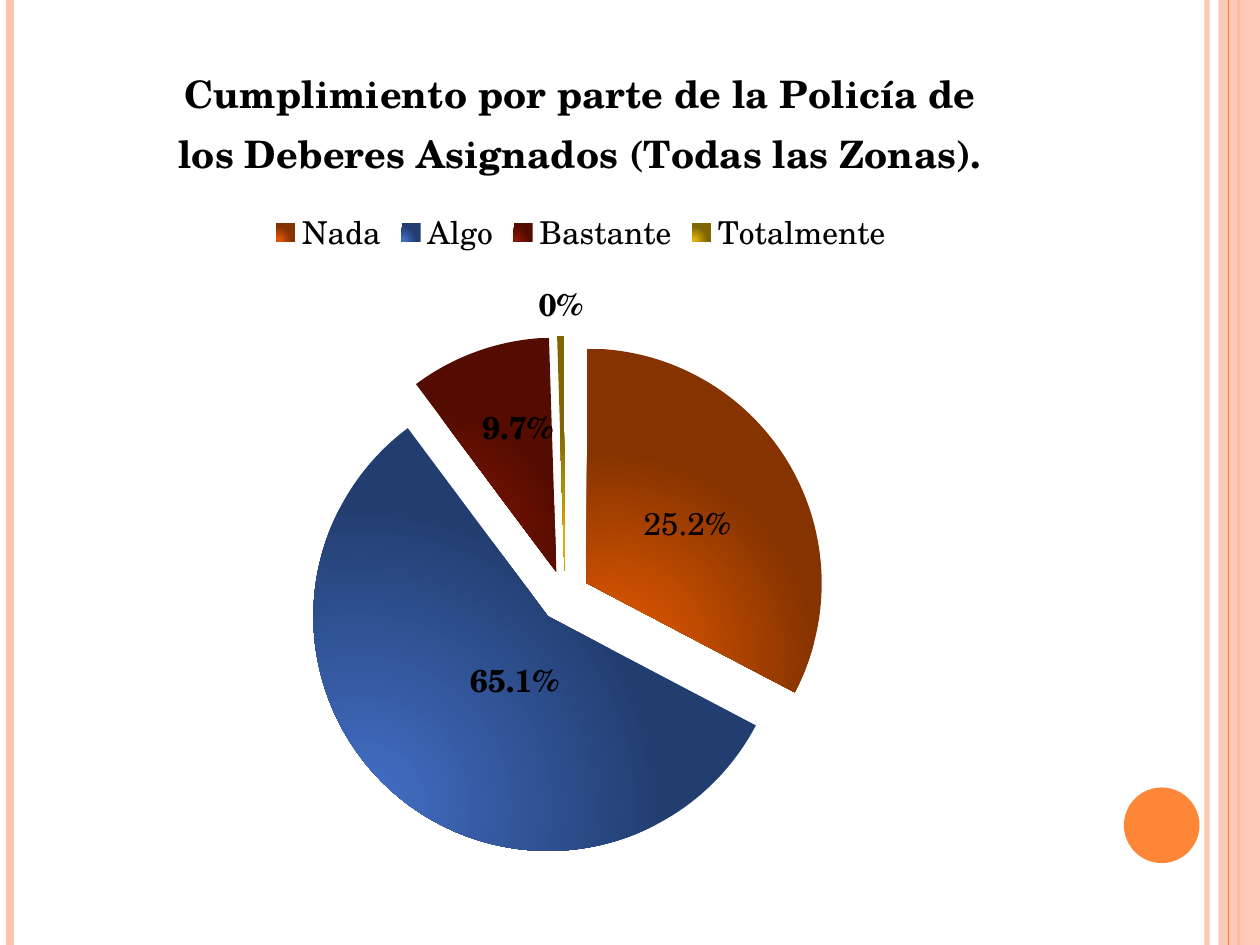
import dataclasses
from typing import Optional

import lxml.etree
import pptx
import pptx.chart.data
import pptx.dml.color
import pptx.enum.chart
import pptx.enum.shapes
import pptx.oxml
import pptx.oxml.ns
import pptx.util

Inches, Pt = pptx.util.Inches, pptx.util.Pt
RGBColor = pptx.dml.color.RGBColor
qn = pptx.oxml.ns.qn
LabelPos = pptx.enum.chart.XL_LABEL_POSITION

FONT = "TeX Gyre Schola"
BLACK = RGBColor(0x00, 0x00, 0x00)
PEACH = RGBColor(0xFE, 0xC3, 0xAE)
ORANGE = RGBColor(0xFE, 0x86, 0x37)


@dataclasses.dataclass
class Stripe:
    x: float
    width: float
    color: RGBColor
    alpha: Optional[int] = None


@dataclasses.dataclass
class Slice:
    name: str
    value: float
    label: str
    bright: RGBColor
    dark: RGBColor
    bold: bool = True
    pos: LabelPos = LabelPos.CENTER
    shift: tuple = (0, 0)


STRIPES = [
    Stripe(9.58, 3, PEACH, 93),
    Stripe(0.08, 4.5, PEACH),
    Stripe(9.83, 1.5, ORANGE),
]
THIN_STRIPE = Stripe(9.75, 0.75, ORANGE)

SLICES = [
    Slice("Nada", 32.7, "25.2%", RGBColor(0xEA, 0x5C, 0x00), RGBColor(0x85, 0x33, 0x00), bold=False),
    Slice("Algo", 57.1, "65.1%", RGBColor(0x44, 0x70, 0xC8), RGBColor(0x22, 0x3E, 0x70),
          shift=(0.04, -0.03)),
    Slice("Bastante", 9.7, "9.7%", RGBColor(0x90, 0x18, 0x00), RGBColor(0x55, 0x0C, 0x00),
          shift=(0, -0.04)),
    Slice("Totalmente", 0.5, "0%", RGBColor(0xE6, 0xBA, 0x0A), RGBColor(0x80, 0x66, 0x00),
          pos=LabelPos.OUTSIDE_END),
]


def set_alpha(sp, percent: int) -> None:
    color = sp._element.spPr.find(".//" + qn("a:srgbClr"))
    lxml.etree.SubElement(color, qn("a:alpha"), val=str(percent * 1000))


def add_stripe(s, stripe: Stripe) -> None:
    x = Inches(stripe.x)
    line = s.shapes.add_connector(pptx.enum.shapes.MSO_CONNECTOR.STRAIGHT, x, 0, x, Inches(7.5))
    line.line.color.rgb = stripe.color
    line.line.width = Pt(stripe.width)
    lxml.etree.SubElement(line._element.spPr, qn("a:effectLst"))
    if stripe.alpha:
        set_alpha(line, stripe.alpha)


def add_block(s, kind, left: float, top: float, width: float, height: float, color: RGBColor):
    sp = s.shapes.add_shape(kind, Inches(left), Inches(top), Inches(width), Inches(height))
    sp.shadow.inherit = False
    sp.fill.solid()
    sp.fill.fore_color.rgb = color
    sp.line.fill.background()
    return sp


def chart_layout(x: float, y: float, size: Optional[tuple] = None):
    """Manual layout: an offset, or a fixed inner plot box when size is given."""
    parts = [("x", x), ("y", y)]
    if size:
        parts = [("layoutTarget", "inner"), ("xMode", "edge"), ("yMode", "edge"),
                 *parts, ("w", size[0]), ("h", size[1])]
    layout = pptx.oxml.parse_xml(f"<c:layout {pptx.oxml.ns.nsdecls('c')}/>")
    manual = lxml.etree.SubElement(layout, qn("c:manualLayout"))
    for tag, val in parts:
        lxml.etree.SubElement(manual, qn("c:" + tag), val=str(val))
    return layout


def radial_fill(bright: RGBColor, dark: RGBColor):
    """Circular gradient that glows from near the bottom left corner."""
    return pptx.oxml.parse_xml(
        f'<a:gradFill {pptx.oxml.ns.nsdecls("a")} rotWithShape="1"><a:gsLst>'
        f'<a:gs pos="0"><a:srgbClr val="{bright}"/></a:gs>'
        f'<a:gs pos="100000"><a:srgbClr val="{dark}"/></a:gs></a:gsLst>'
        '<a:path path="circle"><a:fillToRect l="10000" t="90000" r="90000" b="10000"/>'
        '</a:path></a:gradFill>')


def set_font(font, size: float, bold: bool) -> None:
    font.name = FONT
    font.size = Pt(size)
    font.bold = bold
    font.color.rgb = BLACK


def style_slice(ser, idx: int, item: Slice) -> None:
    point = ser.points[idx]
    point.format.line.fill.background()
    point.format.fill.solid()
    solid = ser._element.xpath(f"c:dPt[c:idx/@val='{idx}']/c:spPr/a:solidFill")[0]
    solid.getparent().replace(solid, radial_fill(item.bright, item.dark))
    label = point.data_label
    r = label.text_frame.paragraphs[0].add_run()
    r.text = item.label
    set_font(r.font, 18, item.bold)
    label.position = item.pos
    if any(item.shift):
        node = ser._element.xpath(f"c:dLbls/c:dLbl[c:idx/@val='{idx}']")[0]
        for old in node.findall(qn("c:layout")):
            node.remove(old)
        node.insert(1, chart_layout(*item.shift))


def add_pie(s) -> None:
    data = pptx.chart.data.CategoryChartData()
    data.categories = [item.name for item in SLICES]
    data.add_series("Series 1", [item.value for item in SLICES])
    chart = s.shapes.add_chart(pptx.enum.chart.XL_CHART_TYPE.PIE, Inches(0.39), Inches(0.23),
                               Inches(8.44), Inches(6.88), data).chart
    set_font(chart.font, 18, False)

    # Title and legend
    chart.has_title = True
    r = chart.chart_title.text_frame.paragraphs[0].add_run()
    r.text = "Cumplimiento por parte de la Policía de los Deberes Asignados (Todas las Zonas)."
    set_font(r.font, 21.6, True)
    chart.has_legend = True
    chart.legend.position = pptx.enum.chart.XL_LEGEND_POSITION.TOP
    chart.legend.include_in_layout = False
    set_font(chart.legend.font, 18, False)

    # Slices and their labels
    plot = chart.plots[0]
    plot.vary_by_categories = True
    ser = plot.series[0]
    labels = ser.data_labels
    labels.show_percentage = True
    labels.show_value = False
    labels.number_format = "0.0%"
    labels.number_format_is_linked = False
    set_font(labels.font, 18, True)
    for idx, item in enumerate(SLICES):
        style_slice(ser, idx, item)
    explosion = pptx.oxml.parse_xml(f'<c:explosion {pptx.oxml.ns.nsdecls("c")} val="11"/>')
    ser._element.find(qn("c:dPt")).addprevious(explosion)

    # Plot box
    area = chart._chartSpace.find(".//" + qn("c:plotArea"))
    for old in area.findall(qn("c:layout")):
        area.remove(old)
    area.insert(0, chart_layout(0.24, 0.35, (0.49, 0.61)))


def main() -> None:
    prs = pptx.Presentation()
    prs.slide_width, prs.slide_height = Inches(10), Inches(7.5)
    s = prs.slides.add_slide(prs.slide_layouts[6])

    # Side decoration
    shapes = pptx.enum.shapes.MSO_SHAPE
    for stripe in STRIPES:
        add_stripe(s, stripe)
    set_alpha(add_block(s, shapes.RECTANGLE, 9.67, 0, 0.33, 7.5, PEACH), 87)
    add_stripe(s, THIN_STRIPE)
    add_block(s, shapes.OVAL, 8.92, 6.25, 0.6, 0.6, ORANGE)

    add_pie(s)
    prs.save("out.pptx")


if __name__ == "__main__":
    main()
